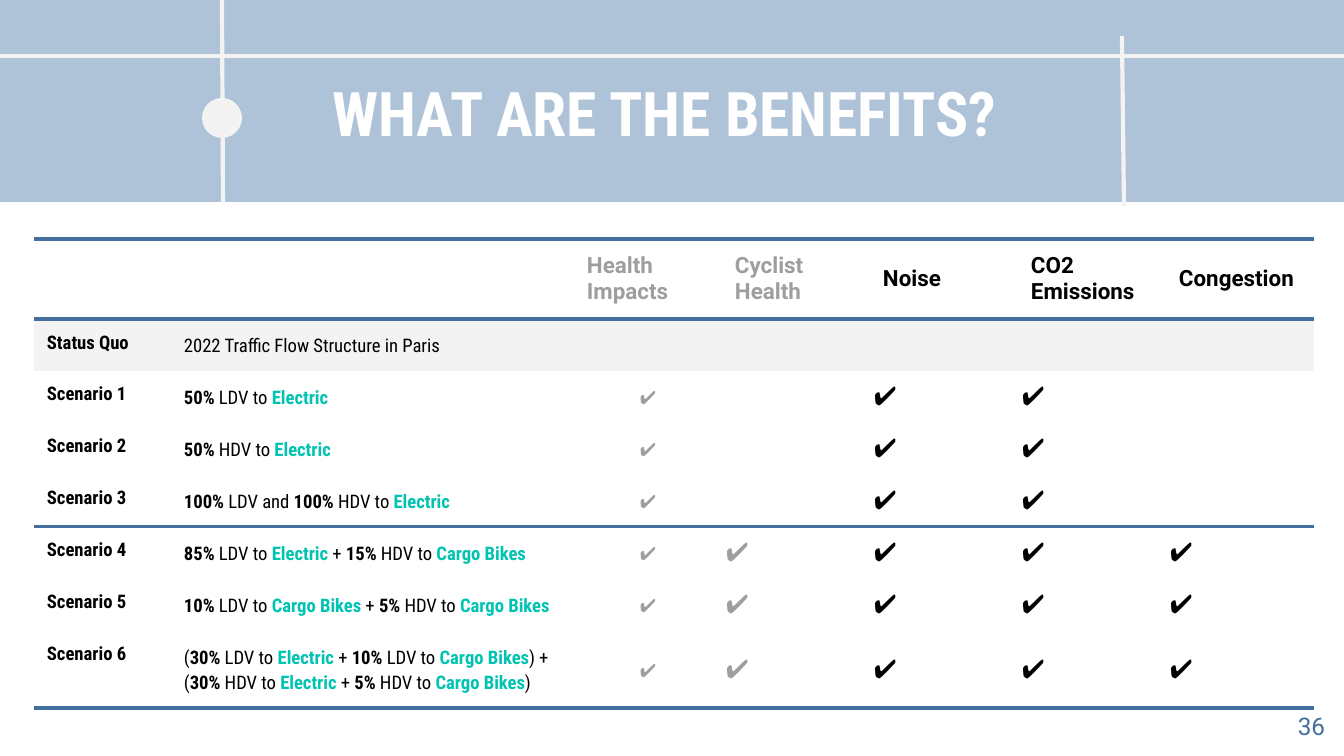
from lxml import etree
from pptx import Presentation
from pptx import util as u
from pptx.dml.color import RGBColor
from pptx.enum import shapes, text
from pptx.oxml import ns

EMU_PER_PX = 914400 / 134.4
PAGE_WIDTH, PAGE_HEIGHT = 1344, 756

BAND_BLUE = RGBColor(0xAE, 0xC2, 0xD8)
RULE_BLUE = RGBColor(0x43, 0x6F, 0x9E)
PALE = RGBColor(0xF3, 0xF3, 0xF3)
GREY = RGBColor(0x9E, 0x9E, 0x9E)
TEAL = RGBColor(0x00, 0xC3, 0xB1)
WHITE = RGBColor(0xFF, 0xFF, 0xFF)
BLACK = RGBColor(0x00, 0x00, 0x00)

SANS, CONDENSED, SYMBOL = "Roboto", "Roboto Condensed", "Arial"
RULE_POINTS = 2.25
CHECK = "✔"
SOLUTIONS = ("Electric", "Cargo Bikes")

COLUMN_WIDTHS = [146, 394] + [148] * 5
ROW_HEIGHTS = [80, 51, 52, 52, 51, 52, 52, 77]
RULES_BELOW = (0, 4, 7)
BENEFITS = [
    ("Health Impacts", GREY),
    ("Cyclist Health", GREY),
    ("Noise", BLACK),
    ("CO2 Emissions", BLACK),
    ("Congestion", BLACK),
]
SCENARIOS = [
    ("Status Quo", "2022 Traffic Flow Structure in Paris", ()),
    ("Scenario 1", "50%| LDV to |Electric", (0, 2, 3)),
    ("Scenario 2", "50%| HDV to |Electric", (0, 2, 3)),
    ("Scenario 3", "100%| LDV and |100%| HDV to |Electric", (0, 2, 3)),
    ("Scenario 4", "85%| LDV to |Electric| + |15%| HDV to |Cargo Bikes", range(5)),
    ("Scenario 5", "10%| LDV to |Cargo Bikes| + |5%| HDV to |Cargo Bikes", range(5)),
    ("Scenario 6", "(|30%| LDV to |Electric| + |10%| LDV to |Cargo Bikes|) + "
     "(|30%| HDV to |Electric| + |5%| HDV to |Cargo Bikes|)", range(5)),
]


def px(length):
    """Turn a length in px into EMU."""
    return u.Emu(round(length * EMU_PER_PX))


def add_span(para, words, size, font, color, bold=False):
    """Add one formatted run to a paragraph."""
    span = para.add_run()
    span.text = words
    span.font.size = u.Pt(size)
    span.font.name = font
    span.font.color.rgb = color
    span.font.bold = bold


def set_margins(holder, side, end):
    """Set the side and end margins of a cell or text frame."""
    holder.margin_left = holder.margin_right = px(side)
    holder.margin_top = holder.margin_bottom = px(end)


def add_label(page, left, top, width, height, align, words, **style):
    """Add a one-line text box."""
    box = page.shapes.add_textbox(px(left), px(top), px(width), px(height))
    frame = box.text_frame
    frame.word_wrap = True
    frame.vertical_anchor = text.MSO_ANCHOR.TOP
    set_margins(frame, 13, 13)
    para = frame.paragraphs[0]
    para.alignment = align
    add_span(para, words, **style)


def add_plain_shape(page, kind, left, top, width, height, color):
    """Add a filled shape without outline or shadow."""
    shape = page.shapes.add_shape(kind, px(left), px(top), px(width), px(height))
    shape.shadow.inherit = False
    shape.fill.solid()
    shape.fill.fore_color.rgb = color
    shape.line.fill.background()


def add_street(page, start, end):
    """Add a pale line of the street pattern."""
    line = page.shapes.add_connector(
        shapes.MSO_CONNECTOR.STRAIGHT, *map(px, start), *map(px, end))
    line.line.color.rgb = PALE
    line.line.width = u.Pt(RULE_POINTS)
    etree.SubElement(line._element.spPr, ns.qn("a:effectLst"))


def add_header(page, left, top, width, height):
    """Draw the title band with its street pattern."""
    add_plain_shape(page, shapes.MSO_SHAPE.RECTANGLE, left, top, width, height, BAND_BLUE)
    add_street(page, (left, top + 56), (left + width, top + 56))
    add_street(page, (left + 222, top), (left + 223, top + 203))
    add_street(page, (left + 1122, top + 36), (left + 1124, top + 206))
    add_plain_shape(page, shapes.MSO_SHAPE.OVAL, left + 202, top + 98, 40, 40, PALE)
    add_label(page, left + 105, top + 62, width - 210, 85, text.PP_ALIGN.CENTER,
              "WHAT ARE THE BENEFITS? ", size=33, font=CONDENSED, color=WHITE, bold=True)


def set_borders(cell, top_rule, bottom_rule):
    """Give a cell its horizontal rules and no other borders."""
    properties = cell._tc.get_or_add_tcPr()
    for side, ruled in (("L", False), ("R", False), ("T", top_rule), ("B", bottom_rule)):
        line = etree.SubElement(properties, ns.qn(f"a:ln{side}"))
        if ruled:
            line.set("w", str(u.Pt(RULE_POINTS)))
            fill = etree.SubElement(line, ns.qn("a:solidFill"))
            etree.SubElement(fill, ns.qn("a:srgbClr"), val=str(RULE_BLUE))
        else:
            etree.SubElement(line, ns.qn("a:noFill"))


def fill_header_cell(cell, benefit):
    """Write the name of a benefit."""
    words, color = benefit
    set_margins(cell, 13, 13)
    add_span(cell.text_frame.paragraphs[0], words, 12, SANS, color, True)


def fill_name_cell(cell, name):
    """Write the name of a scenario."""
    set_margins(cell, 13, 13)
    cell.vertical_anchor = text.MSO_ANCHOR.TOP
    add_span(cell.text_frame.paragraphs[0], name, 10, CONDENSED, BLACK, True)


def fill_description_cell(cell, description):
    """Write a description with bold shares and teal solutions."""
    set_margins(cell, 4, 13)
    para = cell.text_frame.paragraphs[0]
    para.line_spacing = 1.15
    for part in description.split("|"):
        solution = part in SOLUTIONS
        add_span(para, part, 10, CONDENSED, TEAL if solution else BLACK,
                 solution or part.endswith("%"))


def fill_check_cell(cell, index):
    """Write a check mark in the style of its benefit."""
    para = cell.text_frame.paragraphs[0]
    color = BENEFITS[index][1]
    if index == 0:
        para.alignment = text.PP_ALIGN.CENTER
        para.line_spacing = 1.15
        add_span(para, CHECK, 10, CONDENSED, color, True)
    else:
        add_span(para, CHECK, 14, SYMBOL, color)


def add_benefit_table(page, left, top):
    """Build the table of scenarios and benefits."""
    frame = page.shapes.add_table(
        len(ROW_HEIGHTS), len(COLUMN_WIDTHS), px(left), px(top),
        px(sum(COLUMN_WIDTHS)), px(sum(ROW_HEIGHTS)))
    table = frame.table
    table.first_row = table.horz_banding = False
    for column, width in zip(table.columns, COLUMN_WIDTHS):
        column.width = px(width)
    for index, (row, height) in enumerate(zip(table.rows, ROW_HEIGHTS)):
        row.height = px(height)
        for cell in row.cells:
            set_borders(cell, index == 0 or index - 1 in RULES_BELOW, index in RULES_BELOW)
            cell.fill.solid()
            cell.fill.fore_color.rgb = PALE if index == 1 else WHITE
            cell.vertical_anchor = text.MSO_ANCHOR.MIDDLE
            set_margins(cell, 4, 3)
    for column, benefit in enumerate(BENEFITS, 2):
        fill_header_cell(table.cell(0, column), benefit)
    for row, (name, description, checks) in enumerate(SCENARIOS, 1):
        fill_name_cell(table.cell(row, 0), name)
        fill_description_cell(table.cell(row, 1), description)
        for index in checks:
            fill_check_cell(table.cell(row, index + 2), index)


def main():
    """Build and save the deck."""
    deck = Presentation()
    deck.slide_width, deck.slide_height = px(PAGE_WIDTH), px(PAGE_HEIGHT)
    page = deck.slides.add_slide(deck.slide_layouts[6])
    add_header(page, 0, 0, PAGE_WIDTH, 202)
    add_label(page, 1258, 698, 80, 58, text.PP_ALIGN.RIGHT, "36",
              size=13, font=SANS, color=RULE_BLUE)
    add_benefit_table(page, 34, 239)
    deck.save("out.pptx")


if __name__ == "__main__":
    main()
